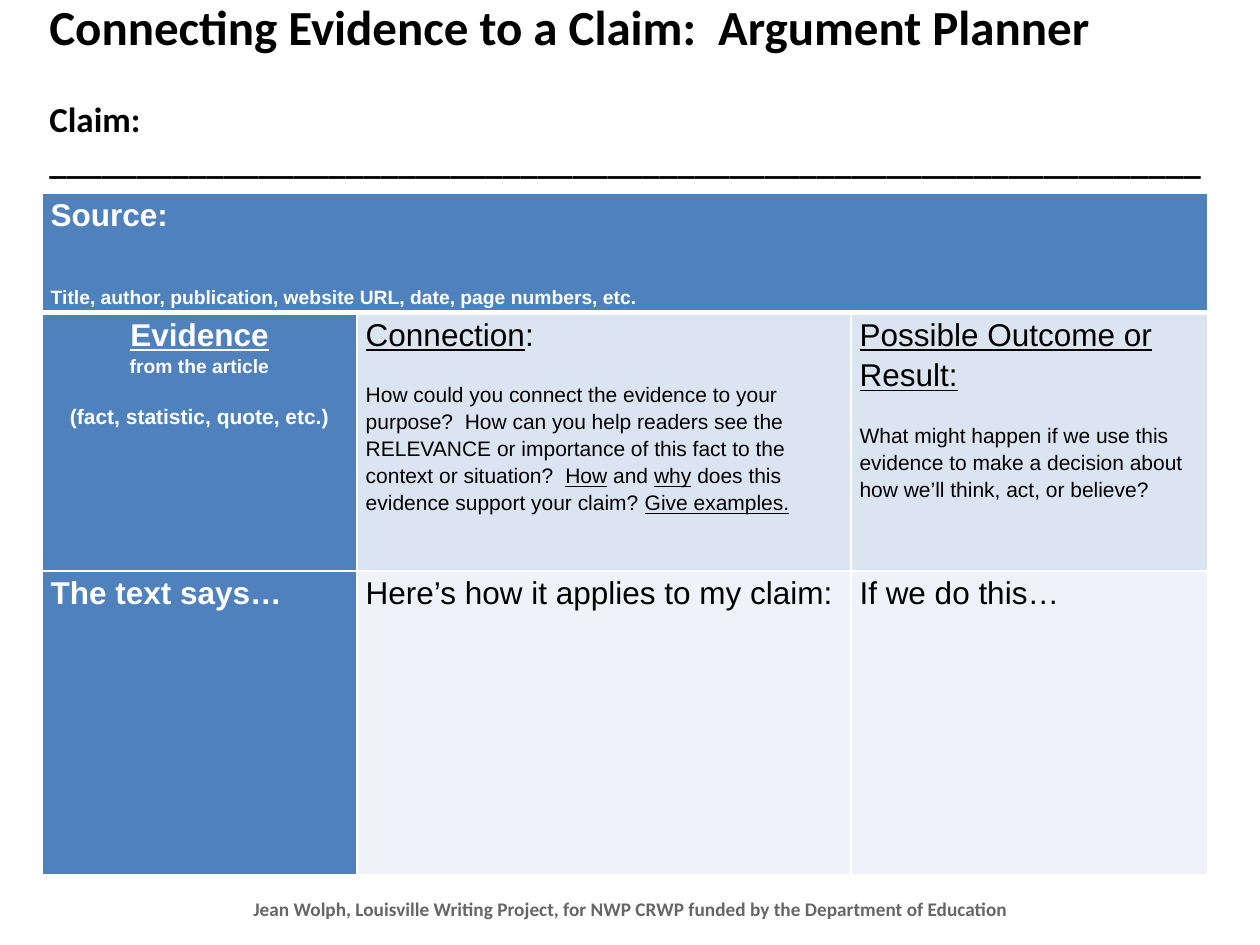
from dataclasses import dataclass

from lxml.etree import SubElement
from pptx import Presentation
from pptx.dml.color import RGBColor
from pptx.enum.text import MSO_ANCHOR, MSO_AUTO_SIZE, PP_ALIGN
from pptx.oxml.ns import qn
from pptx.util import Pt

WHITE, BLACK, GREY = "FFFFFF", "000000", "666666"
BLUE, PALE, PALEST = "4F81BD", "DBE5F1", "EFF3F9"


@dataclass
class Para:
    runs: list[tuple[str, bool]]  # text, underlined
    size: float
    before: float = 0


@dataclass
class Cell:
    row: int
    col: int
    fill: str
    paras: list[Para]
    color: str = BLACK
    bold: bool = False
    align: PP_ALIGN = PP_ALIGN.LEFT


def rgb(color: str) -> RGBColor:
    return RGBColor.from_string(color)


def plain(text: str, size: float, before: float = 0) -> Para:
    return Para([(text, False)], size, before)


def write(tf, paras: list[Para], font: str, color: str, bold: bool,
          align: PP_ALIGN, spacing: float = 1.0) -> None:
    for i, para in enumerate(paras):
        p = tf.paragraphs[0] if i == 0 else tf.add_paragraph()
        p.alignment, p.line_spacing = align, spacing
        p.space_before = Pt(para.before)
        p.font.name, p.font.size, p.font.bold = font, Pt(para.size), bold
        p.font.color.rgb = rgb(color)
        for text, underlined in para.runs:
            r = p.add_run()
            r.text = text
            if underlined:
                r.font.underline = True


def add_borders(cell, widths: dict[str, float]) -> None:
    tcPr = cell._tc.get_or_add_tcPr()
    for side, width in widths.items():
        ln = SubElement(tcPr, qn(f"a:ln{side}"), w=str(Pt(width)))
        fill = SubElement(ln, qn("a:solidFill"))
        SubElement(fill, qn("a:srgbClr"), val=WHITE)


def fill_cell(table, c: Cell) -> None:
    cell = table.cell(c.row, c.col)
    cell.fill.solid()
    cell.fill.fore_color.rgb = rgb(c.fill)
    cell.margin_left = cell.margin_right = Pt(5)
    cell.margin_top = cell.margin_bottom = 0
    write(cell.text_frame, c.paras, "Arial", c.color, c.bold, c.align, 1.15)


CELLS = [
    Cell(0, 0, BLUE, [
        plain("Source:", 18),
        plain("Title, author, publication, website URL, date, page numbers, etc.", 11, 29),
    ], WHITE, True),
    Cell(1, 0, BLUE, [
        Para([("Evidence", True)], 18),
        plain("from the article", 11),
        plain("(fact, statistic, quote, etc.)", 12, 14),
    ], WHITE, True, PP_ALIGN.CENTER),
    Cell(1, 1, PALE, [
        Para([("Connection", True), (":", False)], 18),
        Para([
            ("How could you connect the evidence to your purpose?  How can you help "
             "readers see the RELEVANCE or importance of this fact to the context or "
             "situation?  ", False),
            ("How", True), (" and ", False), ("why", True),
            (" does this evidence support your claim? ", False),
            ("Give examples.", True),
        ], 12, 15.5),
    ]),
    Cell(1, 2, PALE, [
        Para([("Possible Outcome or Result:", True)], 18),
        plain("What might happen if we use this evidence to make a decision about "
              "how we’ll think, act, or believe?", 12, 15.5),
    ]),
    Cell(2, 0, BLUE, [plain("The text says…", 18)], WHITE, True),
    Cell(2, 1, PALEST, [plain("Here’s how it applies to my claim:", 18)]),
    Cell(2, 2, PALEST, [plain("If we do this…", 18)]),
]
COL_WIDTHS = [180, 282.2, 203.8]
ROW_HEIGHTS = [68.4, 147.6, 173.5]

prs = Presentation()
prs.slide_width, prs.slide_height = Pt(720), Pt(540)
s = prs.slides.add_slide(prs.slide_layouts[5])

# Title with the claim line
title = s.shapes.title
title.left, title.top, title.width, title.height = Pt(21), Pt(-5.8), Pt(678), Pt(147.6)
tf = title.text_frame
tf.word_wrap, tf.auto_size = True, MSO_AUTO_SIZE.NONE
tf.vertical_anchor = MSO_ANCHOR.TOP
write(tf, [
    plain("Connecting Evidence to a Claim:  Argument Planner", 28),
    plain("Claim:  " + "_" * 66, 20, 24),
], "Calibri", BLACK, True, PP_ALIGN.LEFT)

# Planner table
table = s.shapes.add_table(len(ROW_HEIGHTS), len(COL_WIDTHS), Pt(24), Pt(110.2),
                           Pt(sum(COL_WIDTHS)), Pt(sum(ROW_HEIGHTS))).table
table.first_row = table.horz_banding = False
for column, width in zip(table.columns, COL_WIDTHS):
    column.width = Pt(width)
for i, (row, height) in enumerate(zip(table.rows, ROW_HEIGHTS)):
    row.height = Pt(height)
    for cell in row.cells:
        add_borders(cell, {"L": 1, "R": 1, "T": 3 if i == 1 else 1, "B": 3 if i == 0 else 1})
table.cell(0, 0).merge(table.cell(0, 2))
for c in CELLS:
    fill_cell(table, c)

# Credit line
sp = s.shapes.add_textbox(Pt(74.2), Pt(506.2), Pt(572.4), Pt(23.8))
tf = sp.text_frame
tf.word_wrap = True
tf.margin_left = tf.margin_right = tf.margin_top = tf.margin_bottom = Pt(7.2)
write(tf, [plain("Jean Wolph, Louisville Writing Project, for NWP CRWP funded by the "
                 "Department of Education", 11)], "Calibri", GREY, True, PP_ALIGN.CENTER)

prs.save("out.pptx")
